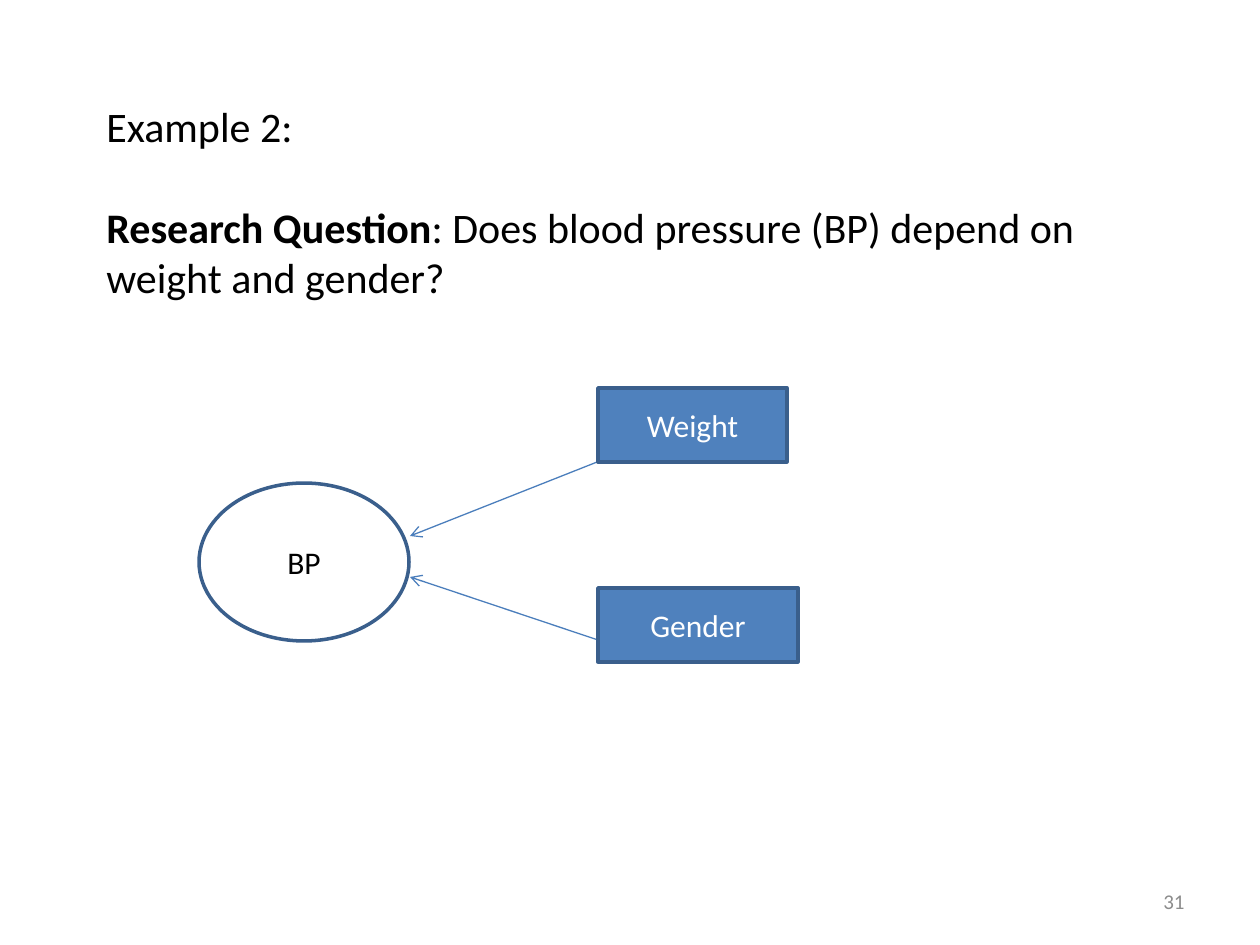
from dataclasses import dataclass

from lxml import etree
from pptx import Presentation
from pptx.dml.color import RGBColor
from pptx.enum.shapes import MSO_CONNECTOR, MSO_SHAPE
from pptx.enum.text import MSO_ANCHOR, PP_ALIGN
from pptx.oxml.ns import qn
from pptx.util import Emu, Pt

LINE = MSO_CONNECTOR.STRAIGHT
RECT, OVAL = MSO_SHAPE.RECTANGLE, MSO_SHAPE.OVAL
TOP, MIDDLE = MSO_ANCHOR.TOP, MSO_ANCHOR.MIDDLE
LEFT, CENTER, RIGHT = PP_ALIGN.LEFT, PP_ALIGN.CENTER, PP_ALIGN.RIGHT
SCALE = 914400 / 126


@dataclass(frozen=True)
class Theme:
    font: str = "Calibri"
    ink: str = "000000"
    paper: str = "FFFFFF"
    blue: str = "4F81BD"
    edge: str = "3A5F8C"
    arrow: str = "4B7EBC"
    gray: str = "8C8C8C"
    body: int = 24
    label: int = 18
    small: int = 12


def px(*vals):
    """Turn px lengths into EMU."""
    return [Emu(round(val * SCALE)) for val in vals]


class Painter:
    def __init__(self, slide, theme):
        self.slide = slide
        self.theme = theme

    def typeset(self, frame, paras, size, color, align, anchor, gap=0):
        """Fill a frame with paragraphs, each a list of (text, bold) runs."""
        form = {"word_wrap": True, "vertical_anchor": anchor}
        for name, val in form.items():
            setattr(frame, name, val)
        for num, runs in enumerate(paras):
            para = frame.add_paragraph() if num else frame.paragraphs[0]
            para.alignment = align
            para.space_before = Pt(gap if num else 0)
            for text, bold in runs:
                run = para.add_run()
                run.text = text
                look = {"name": self.theme.font, "size": Pt(size), "bold": bold}
                for name, val in look.items():
                    setattr(run.font, name, val)
                run.font.color.rgb = RGBColor.from_string(color)

    def text(self, box, paras, size, color, align=LEFT, anchor=TOP, gap=0):
        frame = self.slide.shapes.add_textbox(*px(*box)).text_frame
        self.typeset(frame, paras, size, color, align, anchor, gap)

    def node(self, kind, box, label, fill, color):
        shape = self.slide.shapes.add_shape(kind, *px(*box))
        shape.shadow.inherit = False
        shape.fill.solid()
        shape.fill.fore_color.rgb = RGBColor.from_string(fill)
        shape.line.color.rgb = RGBColor.from_string(self.theme.edge)
        shape.line.width = Pt(2)
        self.typeset(shape.text_frame, [[(label, False)]], self.theme.label,
                     color, CENTER, MIDDLE)

    def arrow(self, start, end):
        link = self.slide.shapes.add_connector(LINE, *px(*start, *end))
        link.line.color.rgb = RGBColor.from_string(self.theme.arrow)
        link.line.width = Pt(0.75)
        props = link.element.spPr
        etree.SubElement(props.find(qn("a:ln")), qn("a:tailEnd"), type="arrow")
        etree.SubElement(props, qn("a:effectLst"))


def main():
    deck = Presentation()
    deck.slide_width, deck.slide_height = px(1260, 945)
    theme = Theme()
    art = Painter(deck.slides.add_slide(deck.slide_layouts[6]), theme)

    intro = [
        [("Example 2:", False)],
        [("Research Question", True),
         (": Does blood pressure (BP) depend on weight and gender?", False)],
    ]
    art.text((94, 94, 1061, 217), intro, theme.body, theme.ink, gap=29)

    art.node(OVAL, (199, 483, 210, 158), "BP", theme.paper, theme.ink)
    causes = [
        ("Weight", (598, 388, 189, 74), (625, 451), (410, 536)),
        ("Gender", (598, 588, 200, 74), (598, 640), (410, 577)),
    ]
    for label, box, start, end in causes:
        art.arrow(start, end)
        art.node(RECT, box, label, theme.blue, theme.paper)

    art.text((903, 876, 294, 50), [[("31", False)]], theme.small, theme.gray,
             RIGHT, MIDDLE)
    deck.save("out.pptx")


if __name__ == "__main__":
    main()
